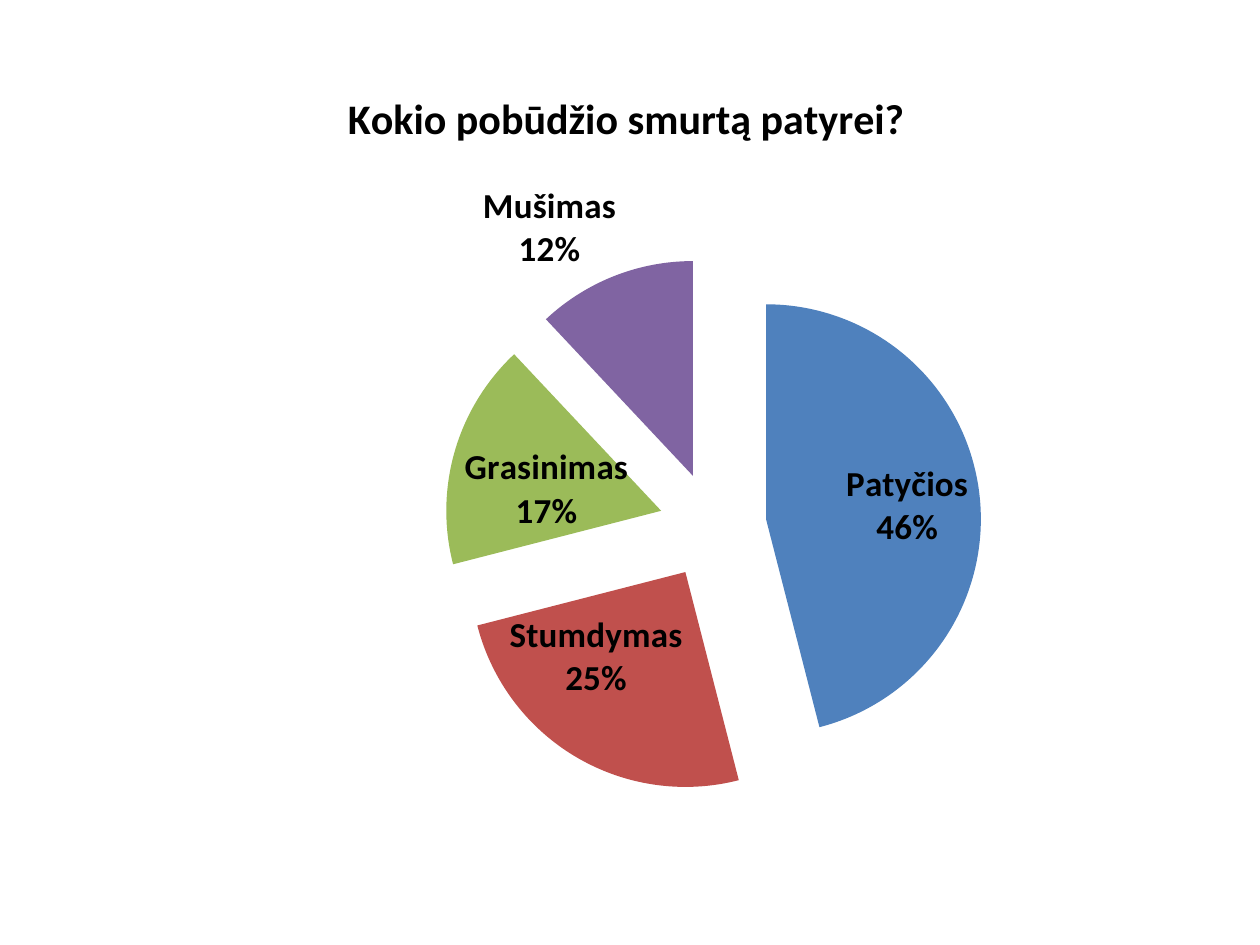
from pptx import Presentation
from pptx.chart.data import CategoryChartData
from pptx.dml.color import RGBColor
from pptx.enum.chart import XL_CHART_TYPE as ChartType, XL_LABEL_POSITION as LabelPosition
from pptx.oxml import parse_xml
from pptx.oxml.ns import nsdecls
from pptx.util import Cm, Pt

# Content: category, percent, colour, label shift as a share of the chart
TITLE = "Kokio pobūdžio smurtą patyrei?"
SLICES = [
    ("Patyčios", 46, RGBColor(0x4F, 0x81, 0xBD), (0.03, 0)),
    ("Stumdymas", 25, RGBColor(0xC0, 0x50, 0x4D), (-0.03, -0.01)),
    ("Grasinimas", 17, RGBColor(0x9B, 0xBB, 0x59), (-0.01, 0.01)),
    ("Mušimas", 12, RGBColor(0x80, 0x64, 0xA2), (-0.09, -0.18)),
]
BLACK = RGBColor(0, 0, 0)
FONT = "Calibri"
EXPLOSION = 25


def style(font, size):
    font.name, font.size, font.bold = FONT, Pt(size), True
    font.color.rgb = BLACK


def manual_layout(inner):
    return f'<c:layout {nsdecls("c")}><c:manualLayout>{inner}</c:manualLayout></c:layout>'


def shifted_label(index, shift):
    x, y = shift
    layout = manual_layout(f'<c:x val="{x}"/><c:y val="{y}"/>')
    return parse_xml(
        f'<c:dLbl {nsdecls("c")}><c:idx val="{index}"/>{layout}'
        '<c:dLblPos val="ctr"/><c:showLegendKey val="0"/><c:showVal val="0"/>'
        '<c:showCatName val="1"/><c:showSerName val="0"/><c:showPercent val="1"/>'
        '<c:showBubbleSize val="0"/><c:separator>\n</c:separator></c:dLbl>')


deck = Presentation()
deck.slide_width, deck.slide_height = Cm(25.4), Cm(19.05)
page = deck.slides.add_slide(deck.slide_layouts[6])

# Pie chart
chart_data = CategoryChartData()
chart_data.categories = [name for name, *_ in SLICES]
chart_data.add_series("Series 1", [value for _, value, *_ in SLICES])
chart = page.shapes.add_chart(
    ChartType.PIE, Cm(0.99), Cm(1.19), Cm(23.27), Cm(16.66), chart_data).chart
chart.font.name, chart.font.size = FONT, Pt(10)
chart.has_legend = False

# Chart title
chart.has_title = True
para = chart.chart_title.text_frame.paragraphs[0]
span = para.add_run()
span.text = TITLE
style(span.font, 24)

# Plot area
plot = chart.plots[0]
plot.vary_by_categories = True
plot_area = chart.element.chart.plotArea
for old_layout in plot_area.findall("{*}layout"):
    plot_area.remove(old_layout)
plot_area.insert(0, parse_xml(manual_layout(
    '<c:layoutTarget val="inner"/><c:xMode val="edge"/><c:yMode val="edge"/>'
    '<c:x val="0.34"/><c:y val="0.24"/><c:w val="0.47"/><c:h val="0.65"/>')))

# Slices, all pulled apart
series = plot.series[0]
for index, (_, _, colour, _) in enumerate(SLICES):
    fill = series.points[index].format.fill
    fill.solid()
    fill.fore_color.rgb = colour
first_point = series.points[0].format and series._element.find("{*}dPt")
first_point.addprevious(parse_xml(f'<c:explosion {nsdecls("c")} val="{EXPLOSION}"/>'))

# Labels
labels = series.data_labels
style(labels.font, 20)
labels.number_format, labels.number_format_is_linked = "0%", False
labels.show_value = False
labels.show_category_name = labels.show_percentage = True
labels.position = LabelPosition.CENTER
for index, (*_, shift) in enumerate(SLICES):
    label = shifted_label(index, shift)
    labels._element.insert(index, label)
    style(series.points[index].data_label.font, 20)

deck.save("out.pptx")
